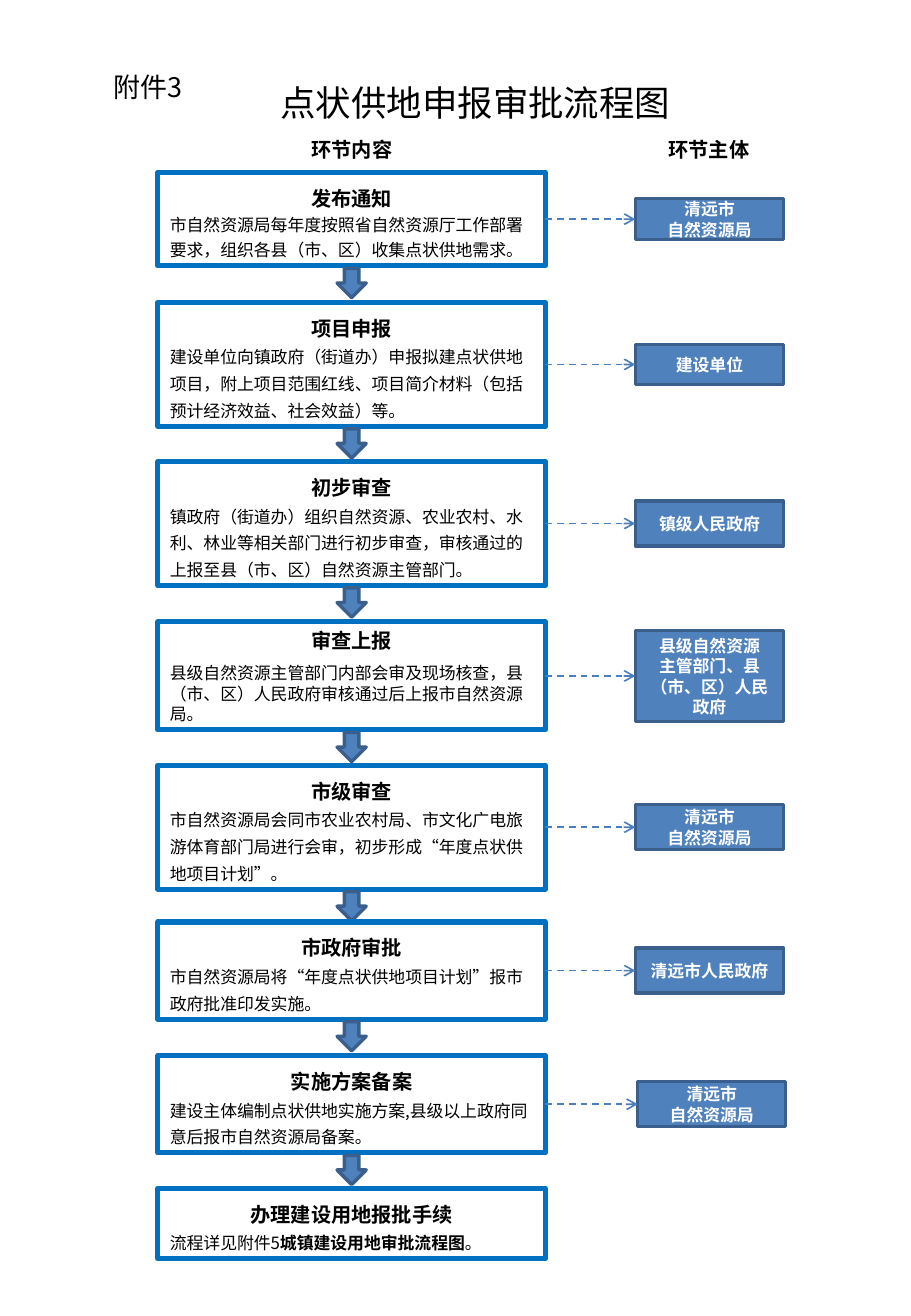
from dataclasses import dataclass

from lxml import etree
from pptx import Presentation
from pptx import util as u
from pptx.dml.color import RGBColor
from pptx.enum import dml, shapes, text
from pptx.oxml import ns

Pt = u.Pt
MSO = shapes.MSO_SHAPE
ALIGN = text.PP_ALIGN


@dataclass(frozen=True)
class Theme:
    font: str = "Noto Sans CJK SC"
    black: str = "000000"
    white: str = "FFFFFF"
    frame: str = "0070C0"
    fill: str = "4F81BD"
    edge: str = "3A5F8C"
    link: str = "4B7EBC"
    title: float = 21
    note: float = 16
    heading: float = 12
    body: float = 10
    leading: float = 1.22


@dataclass(frozen=True)
class Step:
    top: float
    height: float
    title: str
    body: tuple[str, ...]
    spacing: float = 1.3
    title_spacing: float = 1.3
    gap: float = 0


@dataclass(frozen=True)
class Owner:
    lines: tuple[str, ...]
    height: float = 26.6
    left: float = 376.6


@dataclass(frozen=True)
class Label:
    words: str
    left: float
    top: float
    width: float
    size: float
    bold: bool = False
    align: ALIGN = ALIGN.CENTER


T = Theme()
STEP_LEFT, STEP_WIDTH = 93.6, 229.7
OWNER_WIDTH = 87.8
ARROW_SIZE, ARROW_GAP = 17.3, 1.5

LABELS = (
    Label("附件3", 60.5, 38.2, 69.1, T.note, align=ALIGN.LEFT),
    Label("点状供地申报审批流程图", 67.6, 43.9, 428.4, T.title),
    Label("环节内容", 175.6, 77.8, 66, T.heading, bold=True),
    Label("环节主体", 387.2, 77.8, 66, T.heading, bold=True),
)

CITY_BUREAU = ("清远市", "自然资源局")

FLOW: tuple[tuple[Step, Owner | None], ...] = (
    (Step(102.2, 55.4, "发布通知",
          ("市自然资源局每年度按照省自然资源厅工作部署要求，组织各县（市、区）收集点状供地需求。",),
          spacing=1.2),
     Owner(CITY_BUREAU, height=24.5)),
    (Step(179.3, 73.4, "项目申报",
          ("建设单位向镇政府（街道办）申报拟建点状供地项目，附上项目范围红线、项目简介材料（包括预计经济效益、社会效益）等。",)),
     Owner(("建设单位",), height=23.8)),
    (Step(273.6, 73.4, "初步审查",
          ("镇政府（街道办）组织自然资源、农业农村、水利、林业等相关部门进行初步审查，审核通过的上报至县（市、区）自然资源主管部门。",)),
     Owner(("镇级人民政府",))),
    (Step(368.6, 64.1, "审查上报",
          ("县级自然资源主管部门内部会审及现场核查，县（市、区）人民政府审核通过后上报市自然资源局。",),
          spacing=1, title_spacing=1, gap=6),
     Owner(("县级自然资源", "主管部门、县（市、区）人民政府"), height=54)),
    (Step(453.6, 73.4, "市级审查",
          ("市自然资源局会同市农业农村局、市文化广电旅游体育部门局进行会审，初步形成“年度点状供地项目计划”。",)),
     Owner(CITY_BUREAU)),
    (Step(546.5, 57.6, "市政府审批",
          ("市自然资源局将“年度点状供地项目计划”报市政府批准印发实施。",)),
     Owner(("清远市人民政府",))),
    (Step(625.7, 57.6, "实施方案备案",
          ("建设主体编制点状供地实施方案,县级以上政府同意后报市自然资源局备案。",)),
     Owner(CITY_BUREAU, left=378)),
    (Step(704.2, 41.8, "办理建设用地报批手续",
          ("流程详见附件5", "城镇建设用地审批流程图", "。")),
     None),
)


def rgb(value: str) -> RGBColor:
    return RGBColor.from_string(value)


def write(p, words: str, *, size: float, color: str = T.black, bold: bool = False,
          align: ALIGN = ALIGN.LEFT, spacing: float = 1, gap: float = 0) -> None:
    p.alignment = align
    p.line_spacing = Pt(round(size * T.leading * spacing, 1))
    p.space_before = Pt(gap)
    r = p.add_run()
    r.text = words
    r.font.size = Pt(size)
    r.font.bold = bold
    r.font.name = T.font
    r.font.color.rgb = rgb(color)
    etree.SubElement(r.font._element, ns.qn("a:ea"), typeface=T.font)


def add_box(s, kind: MSO, left: float, top: float, width: float, height: float, *,
            line: str, weight: float, fill: str | None = None):
    sp = s.shapes.add_shape(kind, Pt(left), Pt(top), Pt(width), Pt(height))
    sp.shadow.inherit = False
    if fill:
        sp.fill.solid()
        sp.fill.fore_color.rgb = rgb(fill)
    else:
        sp.fill.background()
    sp.line.color.rgb = rgb(line)
    sp.line.width = Pt(weight)
    sp.text_frame.word_wrap = True
    return sp


def add_label(s, label: Label) -> None:
    height = label.size * T.leading + 7.2
    tf = s.shapes.add_textbox(Pt(label.left), Pt(label.top), Pt(label.width), Pt(height)).text_frame
    tf.word_wrap = True
    write(tf.paragraphs[0], label.words, size=label.size, bold=label.bold, align=label.align)


def add_step(s, step: Step):
    sp = add_box(s, MSO.RECTANGLE, STEP_LEFT, step.top, STEP_WIDTH, step.height,
                 line=T.frame, weight=3)
    tf = sp.text_frame
    tf.vertical_anchor = text.MSO_ANCHOR.TOP
    write(tf.paragraphs[0], step.title, size=T.heading, bold=True,
          align=ALIGN.CENTER, spacing=step.title_spacing)
    p = tf.add_paragraph()
    for i, words in enumerate(step.body):
        write(p, words, size=T.body, bold=i % 2 == 1, spacing=step.spacing, gap=step.gap)
    return sp


def add_owner(s, owner: Owner, step: Step):
    top = step.top + (step.height - owner.height) / 2
    sp = add_box(s, MSO.RECTANGLE, owner.left, top, OWNER_WIDTH, owner.height,
                 line=T.edge, weight=2, fill=T.fill)
    tf = sp.text_frame
    tf.vertical_anchor = text.MSO_ANCHOR.MIDDLE
    for i, words in enumerate(owner.lines):
        p = tf.add_paragraph() if i else tf.paragraphs[0]
        write(p, words, size=T.body, color=T.white, bold=True, align=ALIGN.CENTER)
    return sp


def add_link(s, step_box, owner_box) -> None:
    c = s.shapes.add_connector(shapes.MSO_CONNECTOR.STRAIGHT, 0, 0, 0, 0)
    c.begin_connect(step_box, 3)
    c.end_connect(owner_box, 1)
    c.line.color.rgb = rgb(T.link)
    c.line.width = Pt(1)
    c.line.dash_style = dml.MSO_LINE.DASH
    etree.SubElement(c.line._get_or_add_ln(), ns.qn("a:tailEnd"), type="arrow")
    etree.SubElement(c._element.spPr, ns.qn("a:effectLst"))


def add_down_arrow(s, step: Step) -> None:
    add_box(s, MSO.DOWN_ARROW, STEP_LEFT + (STEP_WIDTH - ARROW_SIZE) / 2,
            step.top + step.height + ARROW_GAP, ARROW_SIZE, ARROW_SIZE,
            line=T.edge, weight=2, fill=T.fill)


def main() -> None:
    prs = Presentation()
    prs.slide_width, prs.slide_height = Pt(540), Pt(780)
    s = prs.slides.add_slide(prs.slide_layouts[6])
    for label in LABELS:
        add_label(s, label)
    for step, owner in FLOW:
        step_box = add_step(s, step)
        if owner:
            add_link(s, step_box, add_owner(s, owner, step))
            add_down_arrow(s, step)
    prs.save("out.pptx")


if __name__ == "__main__":
    main()
